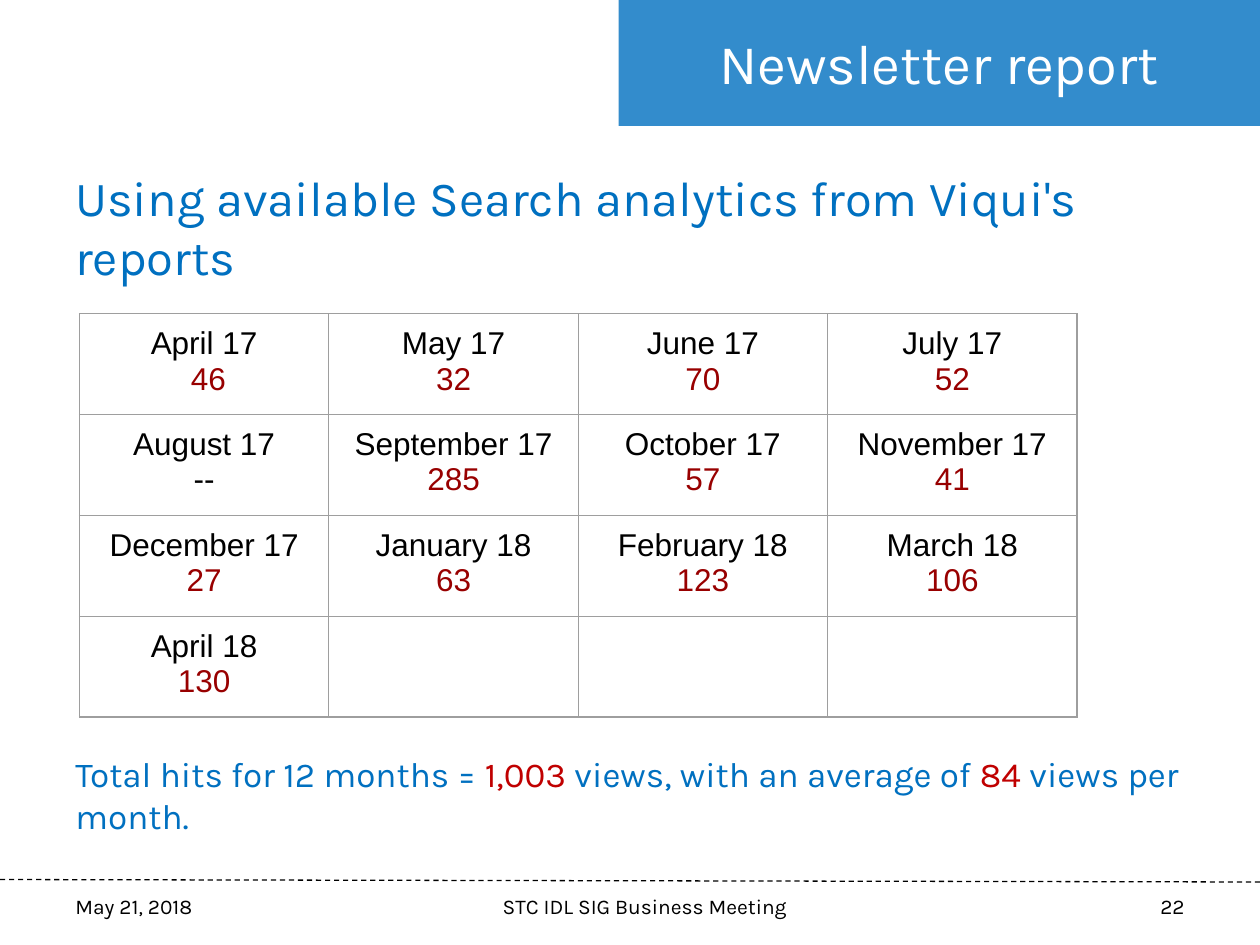
"""Build the newsletter report slide with its monthly views table."""
import dataclasses

import lxml.etree
import pptx
import pptx.dml.color
import pptx.enum.dml
import pptx.enum.shapes
import pptx.enum.text
import pptx.oxml.ns
import pptx.util

Pt = pptx.util.Pt
qn = pptx.oxml.ns.qn
ALIGN = pptx.enum.text.PP_ALIGN
ANCHOR = pptx.enum.text.MSO_ANCHOR


@dataclasses.dataclass(frozen=True)
class Theme:
    blue: str = "0070C0"
    red: str = "C00000"
    dark_red: str = "980000"
    black: str = "000000"
    white: str = "FFFFFF"
    grid: str = "9E9E9E"
    font: str = "Karla"
    table_font: str = "Arial"
    title: int = 32
    heading: int = 28
    body: int = 20
    cell: int = 18
    footer: int = 12


THEME = Theme()
MONTHS = [
    [("April 17", " 46"), ("May 17", "32"), ("June 17", "70"), ("July 17", "52")],
    [("August 17", "--"), ("September 17", "285"), ("October 17", "57"), ("November 17", "41")],
    [("December 17", "27"), ("January 18", "63"), ("February 18", "123"), ("March 18", "106")],
    [("April 18", "130")],
]


def rgb(color):
    return pptx.dml.color.RGBColor.from_string(color)


def add_run(p, text, size=THEME.body, color=THEME.black, font=THEME.font):
    r = p.add_run()
    r.text = text
    r.font.size = Pt(size)
    r.font.name = font
    r.font.color.rgb = rgb(color)


def add_text(s, box, runs, align=ALIGN.LEFT, size=THEME.body):
    tf = s.shapes.add_textbox(*map(Pt, box)).text_frame
    tf.word_wrap = True
    p = tf.paragraphs[0]
    p.alignment = align
    for text, color in runs:
        add_run(p, text, size=size, color=color)


def add_title(s, text):
    sp = s.shapes.title
    sp.left, sp.top, sp.width, sp.height = map(Pt, (353.5, -0.5, 366.5, 72.5))
    sp.fill.solid()
    sp.fill.fore_color.rgb = rgb(THEME.blue)
    color = sp.fill._xPr.find(".//" + qn("a:srgbClr"))
    lxml.etree.SubElement(color, qn("a:alpha"), val="80000")
    tf = sp.text_frame
    tf.word_wrap = True
    tf.vertical_anchor = ANCHOR.MIDDLE
    p = tf.paragraphs[0]
    p.alignment = ALIGN.CENTER
    add_run(p, text, size=THEME.title, color=THEME.white)


def add_dashed_line(s, start, end):
    sp = s.shapes.add_connector(
        pptx.enum.shapes.MSO_CONNECTOR.STRAIGHT, *map(Pt, start + end))
    sp.line.color.rgb = rgb(THEME.black)
    sp.line.width = Pt(0.75)
    sp.line.dash_style = pptx.enum.dml.MSO_LINE.DASH
    lxml.etree.SubElement(sp._element.spPr, qn("a:effectLst"))


def set_borders(cell):
    tcPr = cell._tc.get_or_add_tcPr()
    for i, side in enumerate(("a:lnL", "a:lnR", "a:lnT", "a:lnB")):
        ln = lxml.etree.Element(qn(side), w=str(Pt(0.75)))
        fill = lxml.etree.SubElement(ln, qn("a:solidFill"))
        lxml.etree.SubElement(fill, qn("a:srgbClr"), val=THEME.grid)
        tcPr.insert(i, ln)


def fill_cell(cell, month, views):
    tf = cell.text_frame
    views_color = THEME.dark_red if views.strip().isdigit() else THEME.black
    for p, text, color in ((tf.paragraphs[0], month, THEME.black),
                           (tf.add_paragraph(), views, views_color)):
        p.alignment = ALIGN.CENTER
        add_run(p, text, size=THEME.cell, color=color, font=THEME.table_font)


def add_months_table(s, left, top, col_width, row_height):
    rows, cols = len(MONTHS), len(MONTHS[0])
    table = s.shapes.add_table(rows, cols, Pt(left), Pt(top),
                               Pt(col_width * cols), Pt(row_height * rows)).table
    table.first_row = table.horz_banding = False
    for col in table.columns:
        col.width = Pt(col_width)
    for row in table.rows:
        row.height = Pt(row_height)
    for cell in table.iter_cells():
        cell.fill.background()
        cell.margin_left = cell.margin_right = Pt(7.2)
        cell.margin_top = cell.margin_bottom = Pt(7.2)
        set_borders(cell)
    for i, entries in enumerate(MONTHS):
        for j, (month, views) in enumerate(entries):
            fill_cell(table.cell(i, j), month, views)


def add_footer(s):
    for left, width, text, align in (
            (36, 168, "May 21, 2018", ALIGN.LEFT),
            (221, 295, "STC IDL SIG Business Meeting", ALIGN.CENTER),
            (516, 168, "22", ALIGN.RIGHT)):
        add_text(s, (left, 507, width, 22), [(text, THEME.black)],
                 align=align, size=THEME.footer)


def main():
    prs = pptx.Presentation()
    prs.slide_width, prs.slide_height = Pt(720), Pt(540)
    s = prs.slides.add_slide(prs.slide_layouts.get_by_name("Title Only"))
    add_dashed_line(s, (0, 502.6), (720, 504))
    add_title(s, "Newsletter report")
    add_text(s, (36, 92.2, 648, 76),
             [("Using available Search analytics from Viqui's reports", THEME.blue)],
             size=THEME.heading)
    add_text(s, (36, 426.4, 648, 56), [
        ("Total hits for 12 months = ", THEME.blue),
        ("1,003 ", THEME.red),
        ("views, with an average of ", THEME.blue),
        ("84 ", THEME.red),
        ("views per month.", THEME.blue),
    ])
    add_footer(s)
    add_months_table(s, left=45.4, top=179.2, col_width=142.5, row_height=54.7)
    prs.save("out.pptx")


if __name__ == "__main__":
    main()
